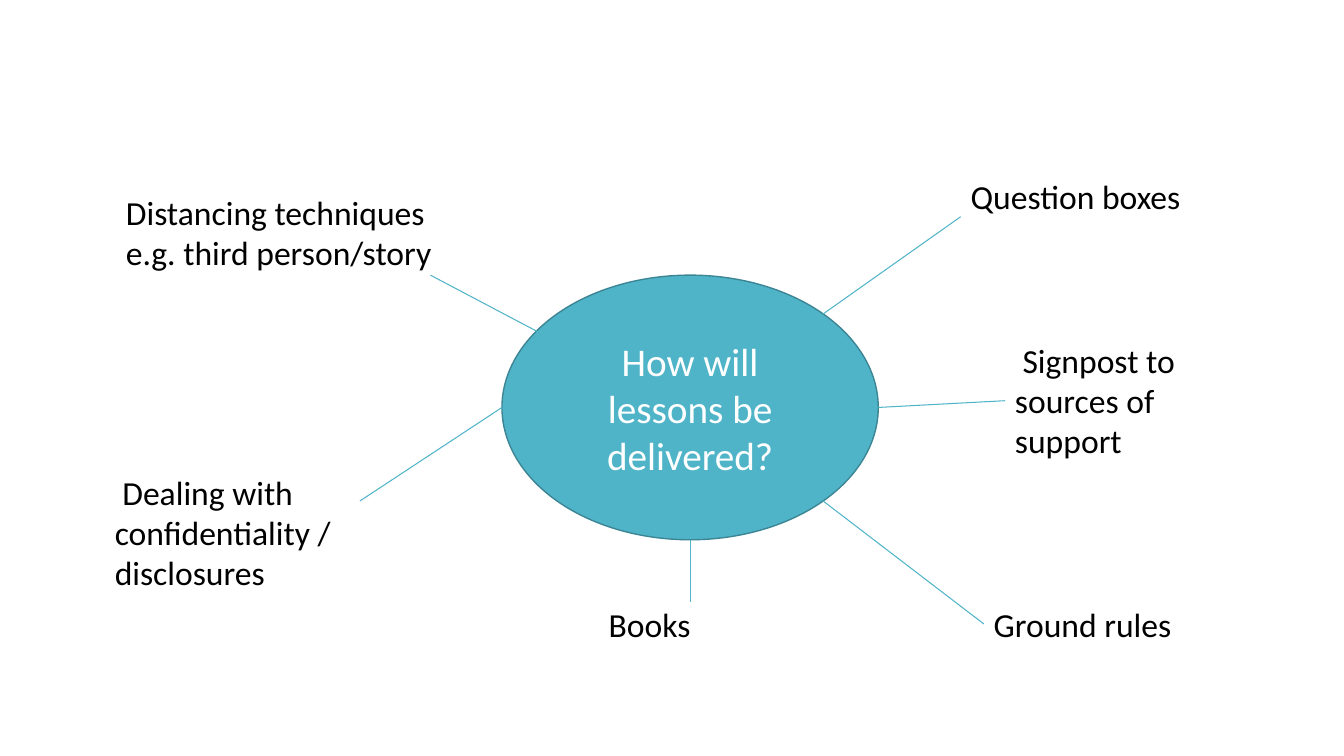
from math import sqrt

from lxml import etree
from pptx import Presentation
from pptx.dml.color import RGBColor
from pptx.enum.shapes import MSO_CONNECTOR, MSO_SHAPE
from pptx.enum.text import MSO_ANCHOR, MSO_AUTO_SIZE, PP_ALIGN
from pptx.oxml.ns import qn
from pptx.util import Inches, Pt

STRAIGHT, ELLIPSE = MSO_CONNECTOR.STRAIGHT, MSO_SHAPE.OVAL
MIDDLE, CENTER, LEFT = MSO_ANCHOR.MIDDLE, PP_ALIGN.CENTER, PP_ALIGN.LEFT
GROW = MSO_AUTO_SIZE.SHAPE_TO_FIT_TEXT

TEAL, DARK_TEAL, WHITE, BLACK = "50B4C8", "3B8594", "FFFFFF", "000000"
LEFT_SIDE = 1

deck = Presentation()
deck.slide_width, deck.slide_height = Inches(13.33), Inches(7.5)
page = deck.slides.add_slide(deck.slide_layouts[6])


def place(column, row):
    return int(deck.slide_width * column / 100), int(deck.slide_height * row / 100)


def write(box, text, size, color, align):
    box.text_frame.word_wrap = True
    para = box.text_frame.paragraphs[0]
    para.alignment = align
    span = para.add_run()
    span.text = text
    for name, value in {"name": "Calibri", "size": Pt(size)}.items():
        setattr(span.font, name, value)
    span.font.color.rgb = RGBColor.from_string(color)


hub_x, hub_y, hub_width, hub_height = 51.35, 53.9, 28, 35
hub = page.shapes.add_shape(
    ELLIPSE,
    *place(hub_x - hub_width / 2, hub_y - hub_height / 2),
    *place(hub_width, hub_height),
)
hub.shadow.inherit = False
hub.fill.solid()
hub.fill.fore_color.rgb = RGBColor.from_string(TEAL)
hub.line.color.rgb = RGBColor.from_string(DARK_TEAL)
hub.line.width = Pt(1)
hub.text_frame.vertical_anchor = MIDDLE
write(hub, "How will lessons be delivered?", 28, WHITE, CENTER)

diagonal = sqrt(0.5)
topics = [
    ("Distancing techniques e.g. third person/story", 8.63, 24.67, 26.4, 2,
     (-0.78, -0.55), (32.03, 36.4)),
    ("Question boxes", 71.48, 22.67, 18.15, 1, (diagonal, -diagonal), (71.48, 28.67)),
    ("Ground rules", 73.2, 79.2, 16.43, 1, (diagonal, diagonal), None),
    ("Books", 44.55, 79.2, 16.13, 1, (0, 1), (hub_x, 79.6)),
    (" Signpost to sources of support", 74.78, 44.27, 17.63, 3, (1, 0), None),
    (" Dealing with confidentiality / disclosures", 7.8, 61.73, 21.38, 3,
     (-1, 0), (26.78, 66.27)),
]

for text, column, row, width, lines, (across, down), end in topics:
    height = 1.27 + 5.4 * lines
    label = page.shapes.add_textbox(*place(column, row), *place(width, height))
    write(label, text, 24, BLACK, LEFT)
    label.text_frame.auto_size = GROW

    start = place(hub_x + across * hub_width / 2, hub_y + down * hub_height / 2)
    spoke = page.shapes.add_connector(
        STRAIGHT, *start, *place(*(end or (column, row + height / 2)))
    )
    if end is None:
        spoke.end_connect(label, LEFT_SIDE)
    spoke.line.color.rgb = RGBColor.from_string(TEAL)
    spoke.line.width = Pt(0.75)
    etree.SubElement(spoke._element.spPr, qn("a:effectLst"))

deck.save("out.pptx")
